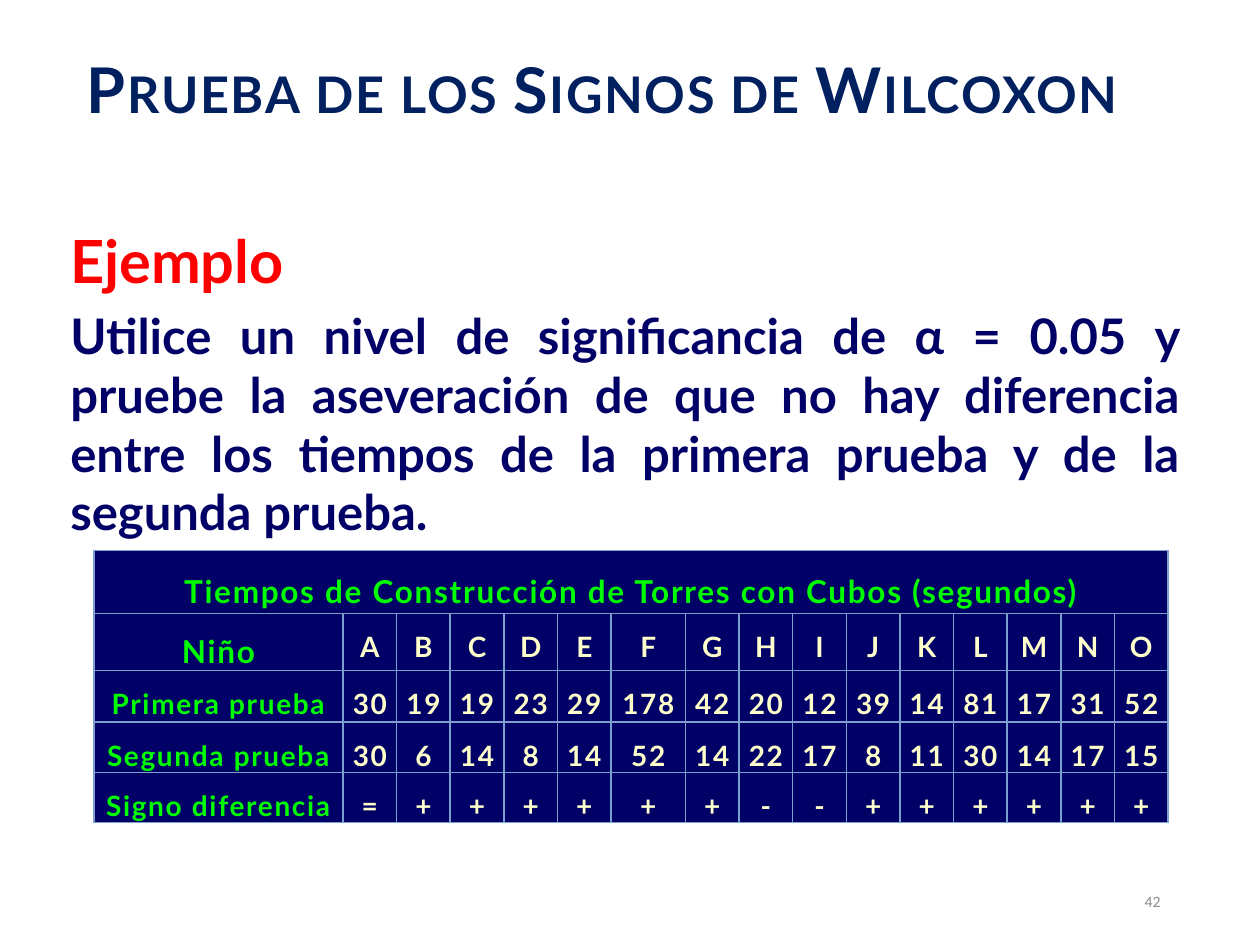
"""Build the slide on the Wilcoxon signed-rank test example."""
import lxml.etree
import pptx
import pptx.dml.color
import pptx.enum.text
import pptx.oxml
import pptx.oxml.ns
import pptx.util

Pt = pptx.util.Pt
ALIGN = pptx.enum.text.PP_ALIGN
ANCHOR = pptx.enum.text.MSO_ANCHOR
qn = pptx.oxml.ns.qn

COLORS = {
    "title": "002060",
    "heading": "FF0000",
    "navy": "000066",
    "label": "00FF00",
    "value": "FFFFCC",
    "border": "7BA0CD",
    "number": "8C8C8C",
}

TABLE_TITLE = "Tiempos de Construcción de Torres con Cubos (segundos)"
ROWS = [
    ["Niño", *"ABCDEFGHIJKLMNO"],
    ["Primera prueba", 30, 19, 19, 23, 29, 178, 42, 20, 12, 39, 14, 81, 17, 31, 52],
    ["Segunda prueba", 30, 6, 14, 8, 14, 52, 14, 22, 17, 8, 11, 30, 14, 17, 15],
    ["Signo diferencia", *"=++++++--++++++"],
]
COL_WIDTHS = [142.4] + [30.65] * 5 + [42.5] + [30.65] * 9
ROW_HEIGHTS = [36, 26, 29.5, 28.3, 28.3]


class SlideBuilder:
    """Hold the style and the current slide."""

    def __init__(self, slide, font="Lato"):
        self.slide = slide
        self.font = font

    def style(self, p, size, color, align, bold=True, font=None, spacing=None):
        """Format a paragraph and its runs."""
        p.alignment = align
        for r in p.runs:
            r.font.size = Pt(size)
            r.font.bold = bold
            r.font.name = font or self.font
            r.font.color.rgb = pptx.dml.color.RGBColor.from_string(COLORS[color])
            if spacing:
                r.font._element.set("spc", str(spacing))

    def line(self, parent, tag, width, color, index):
        """Insert a solid line element into a properties element."""
        ln = lxml.etree.Element(qn(tag), w=str(int(Pt(width))))
        fill = lxml.etree.SubElement(ln, qn("a:solidFill"))
        lxml.etree.SubElement(fill, qn("a:srgbClr"), val=COLORS[color])
        parent.insert(index, ln)

    def title(self, text, left, top, width, height):
        """Place and format the title in outlined small capitals."""
        sp = self.slide.shapes.title
        sp.left, sp.top, sp.width, sp.height = map(Pt, (left, top, width, height))
        tf = sp.text_frame
        tf.text = text
        tf.vertical_anchor = ANCHOR.MIDDLE
        p = tf.paragraphs[0]
        self.style(p, 36, "title", ALIGN.CENTER, spacing=100)
        rPr = p.runs[0].font._element
        rPr.set("cap", "small")
        self.line(rPr, "a:ln", 0.75, "title", 0)

    def text(self, text, left, top, width, height, anchor=ANCHOR.TOP):
        """Add a wrapping text box and return its paragraphs."""
        sp = self.slide.shapes.add_textbox(*map(Pt, (left, top, width, height)))
        tf = sp.text_frame
        tf.word_wrap = True
        tf.vertical_anchor = anchor
        tf.text = text
        return tf.paragraphs

    def cell(self, cell, text, size, color, anchor=ANCHOR.TOP):
        """Fill, border and label one table cell."""
        cell.fill.solid()
        cell.fill.fore_color.rgb = pptx.dml.color.RGBColor.from_string(COLORS["navy"])
        cell.margin_left = cell.margin_right = Pt(5)
        cell.margin_top = cell.margin_bottom = 0
        cell.vertical_anchor = anchor
        tcPr = cell._tc.get_or_add_tcPr()
        for i, side in enumerate(("a:lnL", "a:lnR", "a:lnT", "a:lnB")):
            self.line(tcPr, side, 1, "border", i)
        cell.text_frame.text = str(text)
        p = cell.text_frame.paragraphs[0]
        p.line_spacing = 1.5
        self.style(p, size, color, ALIGN.CENTER, spacing=100)

    def table(self, heading, rows, left, top):
        """Add the table with a heading merged across all columns."""
        n_cols = len(COL_WIDTHS)
        size = map(Pt, (left, top, sum(COL_WIDTHS), sum(ROW_HEIGHTS)))
        table = self.slide.shapes.add_table(len(rows) + 1, n_cols, *size).table
        for col, width in zip(table.columns, COL_WIDTHS):
            col.width = Pt(width)
        for row, height in zip(table.rows, ROW_HEIGHTS):
            row.height = Pt(height)
        for j in range(n_cols):
            self.cell(table.cell(0, j), "" if j else heading, 18, "label", ANCHOR.MIDDLE)
        table.cell(0, 0).merge(table.cell(0, n_cols - 1))
        for i, row in enumerate(rows, 1):
            for j, value in enumerate(row):
                size = 18 if (i, j) == (1, 0) else 16
                self.cell(table.cell(i, j), value, size, "value" if j else "label")


def main():
    """Build and save the presentation."""
    prs = pptx.Presentation()
    prs.slide_width, prs.slide_height = Pt(720), Pt(540)
    s = SlideBuilder(prs.slides.add_slide(prs.slide_layouts[5]))
    s.title("Prueba de los Signos de Wilcoxon", 36, 18.7, 648, 64)
    heading, task = s.text(
        "Ejemplo\nUtilice un nivel de significancia de α = 0.05 y pruebe la "
        "aseveración de que no hay diferencia entre los tiempos de la primera "
        "prueba y de la segunda prueba.",
        33.1, 124.6, 648, 177,
    )
    s.style(heading, 34, "heading", ALIGN.JUSTIFY)
    s.style(task, 28, "navy", ALIGN.JUSTIFY)
    task.space_before = Pt(5.6)
    s.table(TABLE_TITLE, ROWS, 53.6, 314.6)
    number = s.text("42", 476.6, 500.4, 193.7, 28.8, ANCHOR.MIDDLE)[0]
    s.style(number, 9, "number", ALIGN.RIGHT, bold=False, font="Calibri")
    prs.save("out.pptx")


if __name__ == "__main__":
    main()
